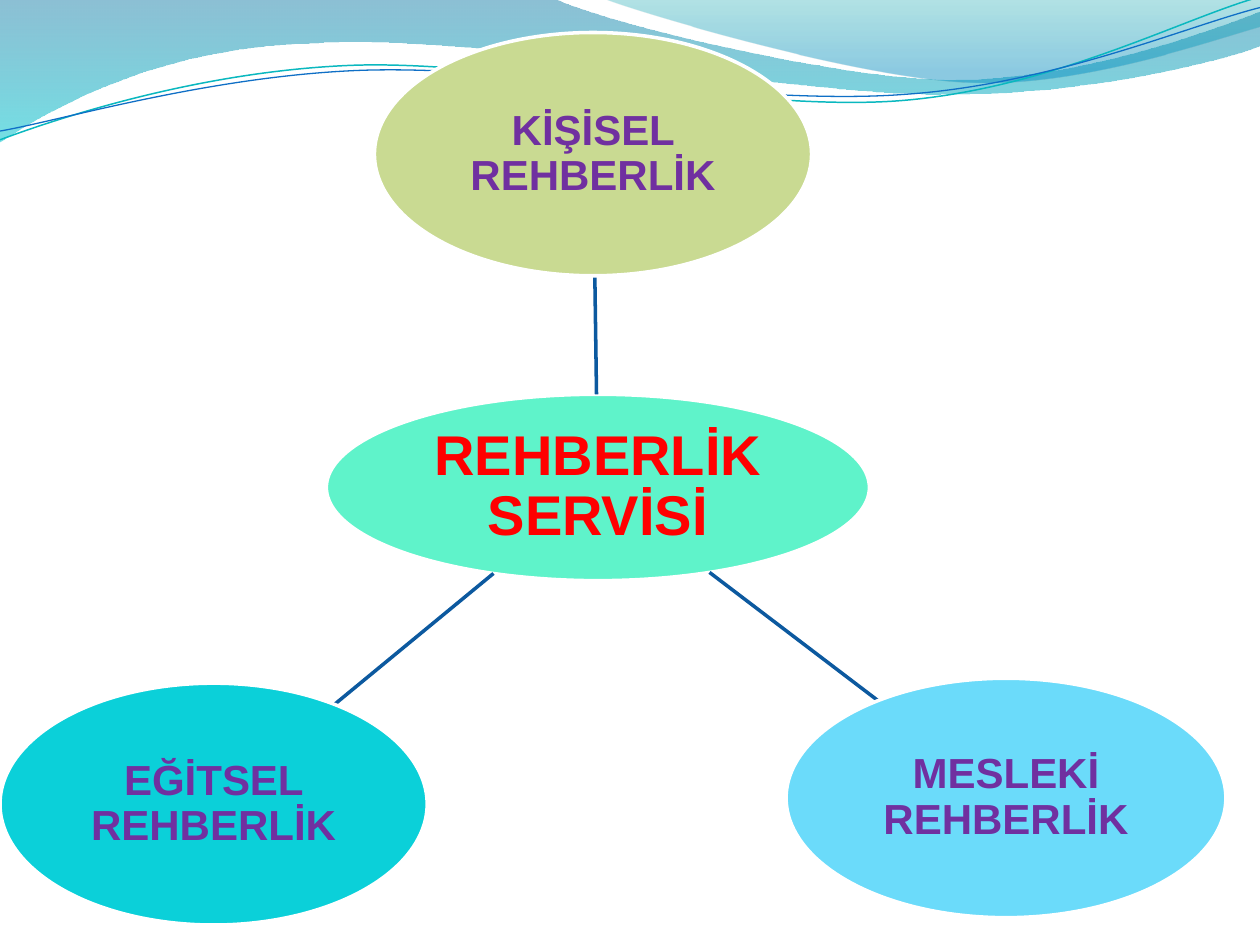
"""Build the guidance service slide: a hub with three satellites under a wave header."""
from math import cos, hypot, radians, sin
from typing import NamedTuple

from lxml.etree import SubElement
from pptx import Presentation
from pptx.dml.color import RGBColor
from pptx.enum.shapes import MSO_CONNECTOR, MSO_SHAPE
from pptx.enum.text import MSO_ANCHOR, PP_ALIGN
from pptx.oxml import parse_xml
from pptx.oxml.ns import nsdecls, qn
from pptx.util import Pt

COLORS = {
    "white": "FFFFFF", "hub": "5FF3CA", "personal": "C9DA92",
    "career": "6BDBFA", "education": "0BD0D9", "spoke": "0C599F",
    "red": "FF0000", "purple": "7030A0", "teal line": "0AB8BF",
    "blue line": "0F6FC6", "wave top": "0074A1", "wave bottom": "00C6CF",
    "crest top": "00A1A9", "crest bottom": "008BBF",
}


class Oval(NamedTuple):
    text: str
    left: float
    top: float
    width: float
    height: float
    fill: str
    color: str = "purple"
    size: float = 24

    @property
    def center(self) -> tuple[float, float]:
        return self.left + self.width / 2, self.top + self.height / 2


class Stop(NamedTuple):
    position: int
    color: str
    opacity: int


class Wave(NamedTuple):
    frame: tuple
    start: tuple
    segments: list
    stops: tuple = ()
    line: str = ""
    weight: float = 0
    rotation: float = 0


HUB = Oval("REHBERLİK SERVİSİ", 186.5, 225.3, 310.3, 106.5, "hub", "red", 32)
SATELLITES = [
    Oval("KİŞİSEL REHBERLİK", 214, 18.6, 249.8, 139, "personal"),
    Oval("MESLEKİ REHBERLİK", 449.2, 387.6, 251.3, 136.8, "career"),
    Oval("EĞİTSEL REHBERLİK", 0, 390.4, 244.1, 138.2, "education"),
]
WAVES = [
    Wave((-0.7, -0.7, 721.4, 82.1), (0, 0), [
        (316.8, -0.7),
        (342.7, 12.2, 478.1, 45.4, 545.8, 45.4),
        (614.2, 45.4, 689.8, 18.7, 720, 6.5),
        (720.7, 25.9),
        (707.8, 31.7, 626.4, 54.7, 537.1, 54),
        (447.8, 54, 275, 20.2, 185, 24.5),
        (92.9, 25.9, 33.1, 59.8, -0.7, 81.4),
        (0, 0),
    ], (Stop(0, "wave top", 45), Stop(100, "wave bottom", 55))),
    Wave((344.9, -0.7, 375.1, 50.4), (344.9, -0.7), [
        (366.5, 7.9, 491, 44.6, 553.7, 46.8),
        (616.3, 49.7, 691.9, 23, 720, 15.1),
        (720, 0),
        (344.9, -0.7),
    ], (Stop(0, "crest top", 30), Stop(80, "crest bottom", 45))),
    Wave((-1.4, 15.8, 721.4, 51.1), (0, 79.9), [
        (34.6, 67, 113.8, 41, 199.4, 37.4),
        (284.4, 33.8, 427, 64.1, 513.4, 57.6),
        (599.8, 51.1, 675.4, 10.8, 718.6, -1.4),
    ], line="teal line", weight=0.85, rotation=-2.7),
    Wave((-1.4, 21.6, 722.2, 41.8), (0, 74.9), [
        (33.8, 69.1, 118.1, 43.9, 203.8, 40.3),
        (290.2, 36.7, 429.8, 60.5, 516.2, 54),
        (601.9, 48.2, 677.5, 15.1, 720, 4.3),
    ], line="blue line", weight=0.75, rotation=-2.7),
]


def rgb(name: str) -> RGBColor:
    """Return the named colour."""
    return RGBColor.from_string(COLORS[name])


def local_point(wave: Wave, x: float, y: float) -> str:
    """Return a slide point as XML in the wave's own unrotated frame."""
    left, top, width, height = wave.frame
    across, down = x - left - width / 2, y - top - height / 2
    angle = radians(-wave.rotation)
    local_x = across * cos(angle) - down * sin(angle) + width / 2
    local_y = across * sin(angle) + down * cos(angle) + height / 2
    return f'<a:pt x="{Pt(local_x)}" y="{Pt(local_y)}"/>'


def outline(wave: Wave):
    """Return the wave's outline of straight and cubic segments."""
    width, height = map(Pt, wave.frame[2:])
    steps = [f"<a:moveTo>{local_point(wave, *wave.start)}</a:moveTo>"]
    for segment in wave.segments:
        tag = "lnTo" if len(segment) == 2 else "cubicBezTo"
        points = "".join(local_point(wave, *pair) for pair in zip(segment[::2], segment[1::2]))
        steps.append(f"<a:{tag}>{points}</a:{tag}>")
    if wave.stops:
        steps.append("<a:close/>")
    return parse_xml(f'<a:path {nsdecls("a")} w="{width}" h="{height}">{"".join(steps)}</a:path>')


def gradient(stops: tuple):
    """Return a top-to-bottom gradient fill with translucent stops."""
    entries = "".join(
        f'<a:gs pos="{stop.position * 1000}"><a:srgbClr val="{COLORS[stop.color]}">'
        f'<a:alpha val="{stop.opacity * 1000}"/></a:srgbClr></a:gs>' for stop in stops)
    return parse_xml(f'<a:gradFill {nsdecls("a")}><a:gsLst>{entries}</a:gsLst>'
                     '<a:lin ang="5400000" scaled="0"/></a:gradFill>')


def draw_wave(page, wave: Wave) -> None:
    """Draw one header wave, filled or as an open line."""
    builder = page.shapes.build_freeform(*map(Pt, wave.start))
    builder.add_line_segments([tuple(map(Pt, segment[-2:])) for segment in wave.segments])
    shape = builder.convert_to_shape()
    for name, value in zip(("left", "top", "width", "height"), wave.frame):
        setattr(shape, name, Pt(value))
    shape.rotation = wave.rotation
    shape.shadow.inherit = False
    shape.fill.background()
    properties = shape.element.spPr
    outlines = properties.find(".//" + qn("a:pathLst"))
    outlines.replace(outlines[0], outline(wave))
    if wave.stops:
        shape.line.fill.background()
        properties.replace(properties.find(qn("a:noFill")), gradient(wave.stops))
    else:
        shape.line.color.rgb = rgb(wave.line)
        shape.line.width = Pt(wave.weight)


def draw_oval(page, oval: Oval) -> None:
    """Draw one labelled ellipse."""
    box = page.shapes.add_shape(
        MSO_SHAPE.OVAL, *map(Pt, (oval.left, oval.top, oval.width, oval.height)))
    box.shadow.inherit = False
    box.fill.solid()
    box.fill.fore_color.rgb = rgb(oval.fill)
    box.line.color.rgb = rgb("white")
    box.line.width = Pt(2)
    frame = box.text_frame
    margins = {f"margin_{side}": Pt(1.5) for side in ("left", "top", "right", "bottom")}
    for name, value in {**margins, "word_wrap": True,
                        "vertical_anchor": MSO_ANCHOR.MIDDLE}.items():
        setattr(frame, name, value)
    para = frame.paragraphs[0]
    for name, value in {"alignment": PP_ALIGN.CENTER, "line_spacing": 0.9}.items():
        setattr(para, name, value)
    span = para.add_run()
    span.text = oval.text
    for name, value in {"name": "Arial", "size": Pt(oval.size), "bold": True}.items():
        setattr(span.font, name, value)
    span.font.color.rgb = rgb(oval.color)


def edge_point(oval: Oval, target: Oval) -> tuple[float, float]:
    """Return where the line towards the target's centre leaves the ellipse."""
    (x, y), (target_x, target_y) = oval.center, target.center
    run, rise = target_x - x, target_y - y
    reach = 1 / hypot(2 * run / oval.width, 2 * rise / oval.height)
    return x + run * reach, y + rise * reach


def draw_spoke(page, hub: Oval, satellite: Oval) -> None:
    """Draw the line between the facing edges of two ellipses."""
    ends = edge_point(hub, satellite) + edge_point(satellite, hub)
    spoke = page.shapes.add_connector(MSO_CONNECTOR.STRAIGHT, *map(Pt, ends))
    spoke.line.color.rgb = rgb("spoke")
    spoke.line.width = Pt(2)
    SubElement(spoke.element.spPr, qn("a:effectLst"))


def main() -> None:
    """Assemble and save the deck."""
    deck = Presentation()
    deck.slide_width, deck.slide_height = Pt(720), Pt(540)
    page = deck.slides.add_slide(deck.slide_layouts[6])
    for wave in WAVES:
        draw_wave(page, wave)
    draw_oval(page, HUB)
    for satellite in SATELLITES:
        draw_spoke(page, HUB, satellite)
        draw_oval(page, satellite)
    deck.save("out.pptx")


if __name__ == "__main__":
    main()
